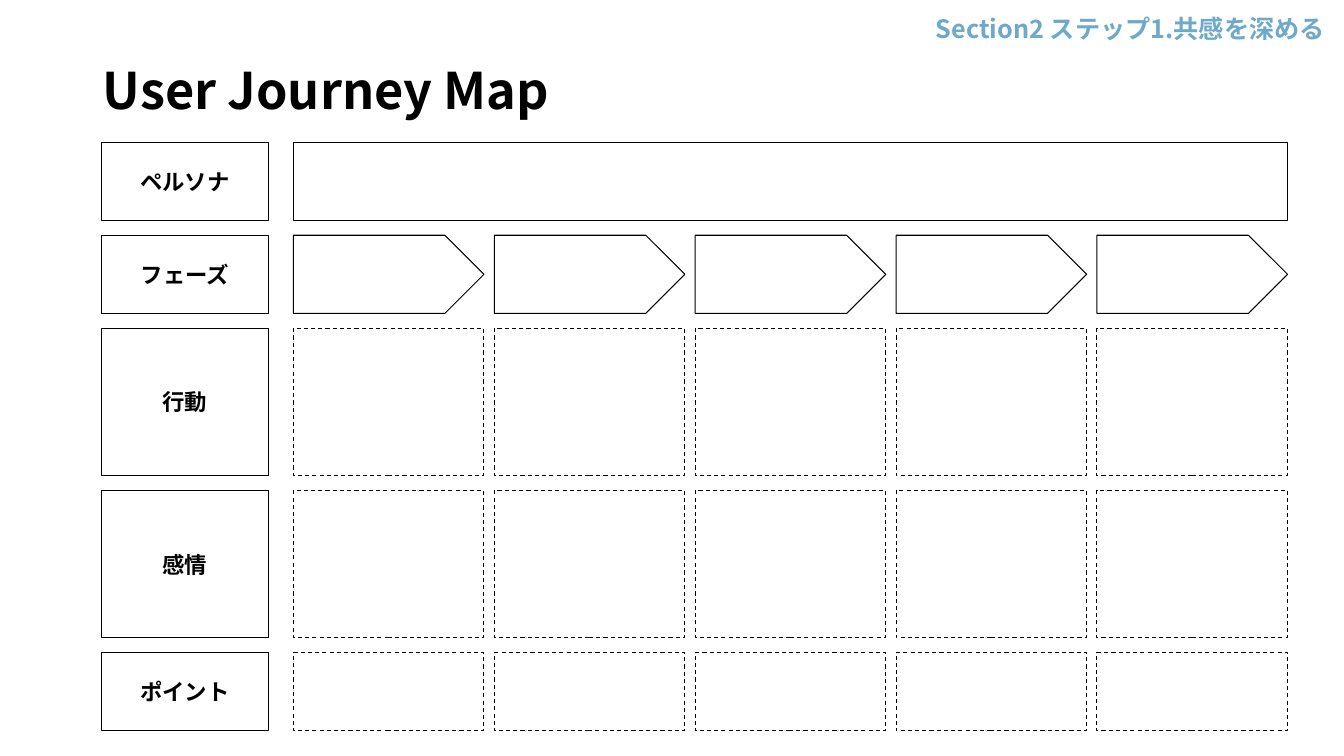
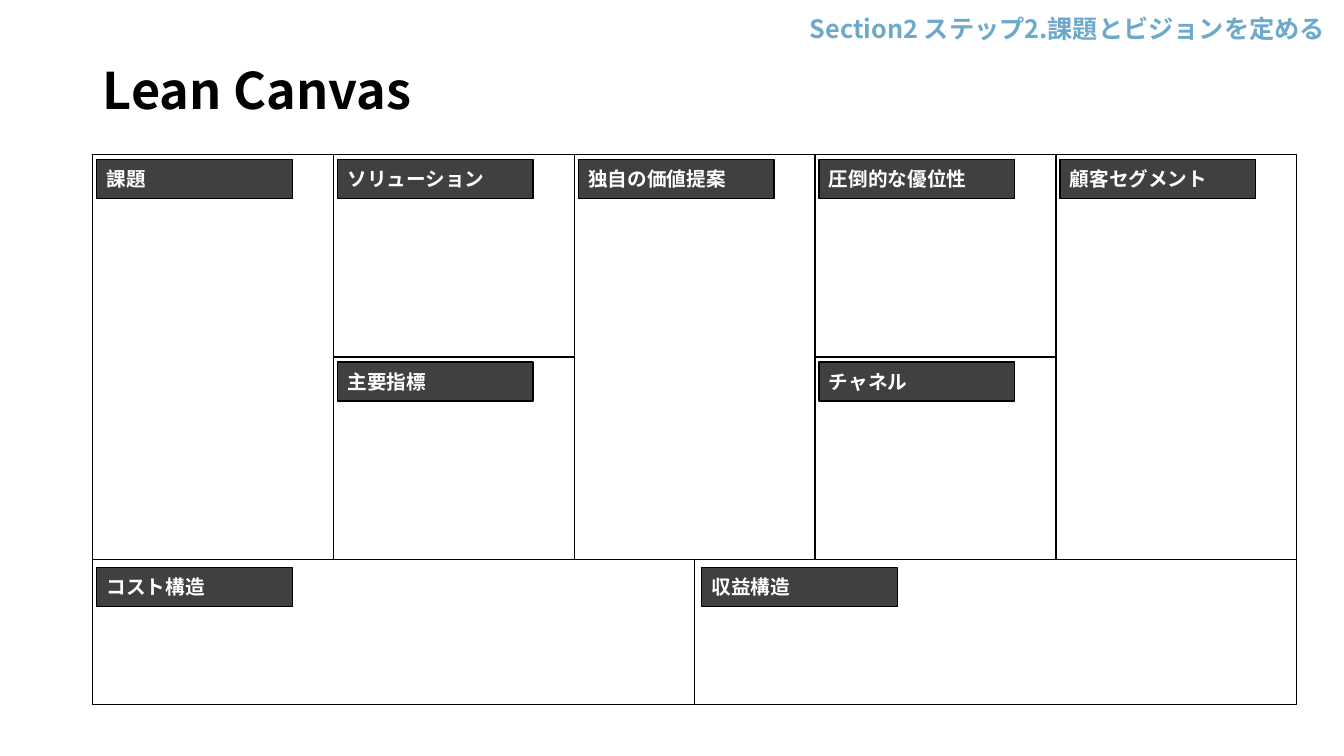
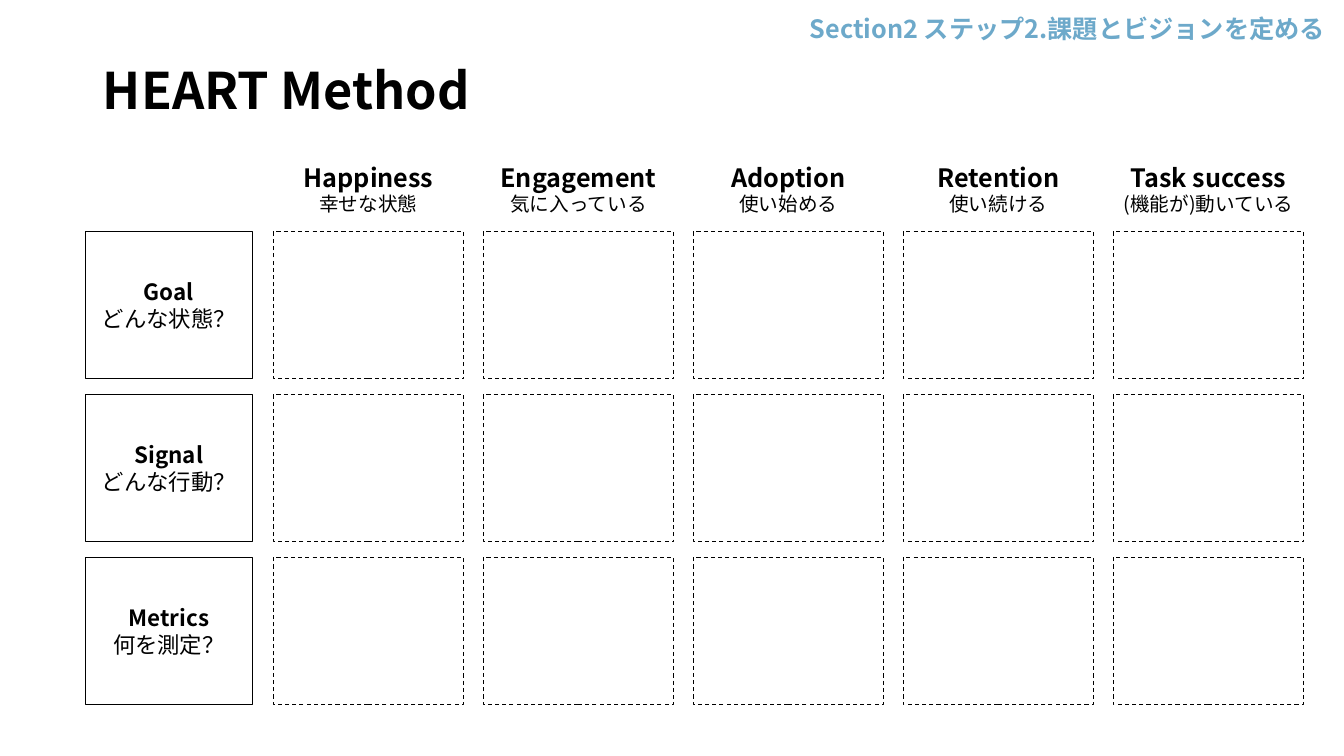
from dataclasses import dataclass

from lxml.etree import SubElement
from pptx import Presentation
from pptx.dml.color import RGBColor
from pptx.enum.dml import MSO_LINE
from pptx.enum.shapes import MSO_SHAPE
from pptx.enum.text import MSO_ANCHOR, MSO_AUTO_SIZE, PP_ALIGN
from pptx.oxml.ns import qn
from pptx.util import Inches, Pt


@dataclass(frozen=True)
class Theme:
    font: str = "Noto Sans CJK JP"
    ink: str = "000000"
    paper: str = "FFFFFF"
    tag: str = "404040"
    accent: str = "6DA9CA"
    title_size: int = 36
    heading_size: int = 18
    label_size: int = 16
    small_size: int = 14
    thin: float = 0.75
    frame: float = 1


THEME = Theme()
SLIDE_SIZE = (13.33, 7.5)
TITLE_BOX = (0.92, 0.52, 11.5, 0.72)
SECTION_BOX = (6.57, 0.08, 6.67, 0.4)
LABEL_WIDTH, CELL_WIDTH = 1.65, 1.89
LOW, HIGH = 0.775, 1.46
PHASES = 5

EMPATHY = "Section2 ステップ1.共感を深める"
VISION = "Section2 ステップ2.課題とビジョンを定める"

JOURNEY_ROWS = [
    ("ペルソナ", LOW, "bar"),
    ("フェーズ", LOW, "arrows"),
    ("行動", HIGH, "notes"),
    ("感情", HIGH, "notes"),
    ("ポイント", LOW, "notes"),
]

CANVAS_COLUMNS = 10
CANVAS_ROWS = [2.01, 2.01, 1.44]
CANVAS_BLOCKS = [
    ("課題", 0, 0, 2, 2),
    ("独自の価値提案", 4, 0, 2, 2),
    ("顧客セグメント", 8, 0, 2, 2),
    ("ソリューション", 2, 0, 2, 1),
    ("主要指標", 2, 1, 2, 1),
    ("圧倒的な優位性", 6, 0, 2, 1),
    ("チャネル", 6, 1, 2, 1),
    ("コスト構造", 0, 2, 5, 1),
    ("収益構造", 5, 2, 5, 1),
]

HEART_COLUMNS = [
    ("Happiness", "幸せな状態"),
    ("Engagement", "気に入っている"),
    ("Adoption", "使い始める"),
    ("Retention", "使い続ける"),
    ("Task success", "(機能が)動いている"),
]
HEART_ROWS = [
    ("Goal", "どんな状態？"),
    ("Signal", "どんな行動？"),
    ("Metrics", "何を測定？"),
]


def spread(start, end, sizes):
    gap = (end - start - sum(sizes)) / (len(sizes) - 1)
    return [start + sum(sizes[:i]) + gap * i for i in range(len(sizes))]


def inches(box):
    return [Inches(length) for length in box]


def add_run(paragraph, text, size, color=THEME.ink, bold=True):
    run = paragraph.add_run()
    run.text = text
    run.font.size = Pt(size)
    run.font.bold = bold
    run.font.color.rgb = RGBColor.from_string(color)
    run.font.name = THEME.font
    SubElement(run.font._element, qn("a:ea")).set("typeface", THEME.font)


def add_panel(slide, box, kind=MSO_SHAPE.RECTANGLE, fill=THEME.paper,
              weight=THEME.thin, dashed=False):
    panel = slide.shapes.add_shape(kind, *inches(box))
    panel.shadow.inherit = False
    panel.fill.solid()
    panel.fill.fore_color.rgb = RGBColor.from_string(fill)
    panel.line.color.rgb = RGBColor.from_string(THEME.ink)
    panel.line.width = Pt(weight)
    if dashed:
        panel.line.dash_style = MSO_LINE.DASH
    return panel


def add_label(slide, box, lines):
    frame = add_panel(slide, box).text_frame
    frame.vertical_anchor = MSO_ANCHOR.MIDDLE
    for i, line in enumerate(lines):
        paragraph = frame.add_paragraph() if i else frame.paragraphs[0]
        paragraph.alignment = PP_ALIGN.CENTER
        add_run(paragraph, line, THEME.label_size, bold=i == 0)


def add_page(deck, title, section):
    slide = deck.slides.add_slide(deck.slide_layouts[5])
    heading = slide.shapes.title
    heading.left, heading.top, heading.width, heading.height = inches(TITLE_BOX)
    frame = heading.text_frame
    frame.auto_size = MSO_AUTO_SIZE.NONE
    frame.vertical_anchor = MSO_ANCHOR.BOTTOM
    paragraph = frame.paragraphs[0]
    paragraph.alignment = PP_ALIGN.LEFT
    paragraph.line_spacing = 0.9
    add_run(paragraph, title, THEME.title_size)

    frame = slide.shapes.add_textbox(*inches(SECTION_BOX)).text_frame
    frame.word_wrap = True
    frame.auto_size = MSO_AUTO_SIZE.SHAPE_TO_FIT_TEXT
    frame.paragraphs[0].alignment = PP_ALIGN.RIGHT
    add_run(frame.paragraphs[0], section, THEME.heading_size, THEME.accent)
    return slide


def build_journey(deck):
    slide = add_page(deck, "User Journey Map", EMPATHY)
    left, right = 2.91, 12.77
    lefts = spread(left, right, [CELL_WIDTH] * PHASES)
    tops = spread(1.41, 7.25, [height for _, height, _ in JOURNEY_ROWS])
    for (label, height, style), top in zip(JOURNEY_ROWS, tops):
        add_label(slide, (1.01, top, LABEL_WIDTH, height), [label])
        if style == "bar":
            add_panel(slide, (left, top, right - left, height))
            continue
        arrows = style == "arrows"
        kind = MSO_SHAPE.PENTAGON if arrows else MSO_SHAPE.RECTANGLE
        for x in lefts:
            add_panel(slide, (x, top, CELL_WIDTH, height), kind, dashed=not arrows)


def build_canvas(deck):
    slide = add_page(deck, "Lean Canvas", VISION)
    left, top, width = 0.92, 1.53, 11.94
    unit = width / CANVAS_COLUMNS
    for label, column, row, columns, rows in CANVAS_BLOCKS:
        x = left + column * unit
        y = top + sum(CANVAS_ROWS[:row])
        height = sum(CANVAS_ROWS[row:row + rows])
        add_panel(slide, (x, y, columns * unit, height), weight=THEME.frame)
        inset_x = 0.07 if column == 5 else 0.04
        inset_y = 0.08 if row == 2 else 0.05
        tag = add_panel(slide, (x + inset_x, y + inset_y, 1.94, 0.39),
                        fill=THEME.tag, weight=THEME.frame)
        tag.text_frame.vertical_anchor = MSO_ANCHOR.MIDDLE
        paragraph = tag.text_frame.paragraphs[0]
        paragraph.alignment = PP_ALIGN.LEFT
        add_run(paragraph, label, THEME.small_size, THEME.paper)


def build_heart(deck):
    slide = add_page(deck, "HEART Method", VISION)
    lefts = spread(2.71, 12.93, [CELL_WIDTH] * len(HEART_COLUMNS))
    tops = spread(2.3, 6.99, [HIGH] * len(HEART_ROWS))
    for lines, top in zip(HEART_ROWS, tops):
        add_label(slide, (0.85, top, LABEL_WIDTH, HIGH), lines)
        for x in lefts:
            add_panel(slide, (x, top, CELL_WIDTH, HIGH), dashed=True)
    for (name, meaning), x in zip(HEART_COLUMNS, lefts):
        frame = slide.shapes.add_textbox(*inches((x, 1.52, CELL_WIDTH, 0.71))).text_frame
        frame.word_wrap = False
        frame.vertical_anchor = MSO_ANCHOR.MIDDLE
        paragraph = frame.paragraphs[0]
        paragraph.alignment = PP_ALIGN.CENTER
        add_run(paragraph, name, THEME.heading_size)
        paragraph.add_line_break()
        add_run(paragraph, meaning, THEME.small_size, bold=False)


def main():
    deck = Presentation()
    deck.slide_width, deck.slide_height = inches(SLIDE_SIZE)
    build_journey(deck)
    build_canvas(deck)
    build_heart(deck)
    deck.save("out.pptx")


if __name__ == "__main__":
    main()
